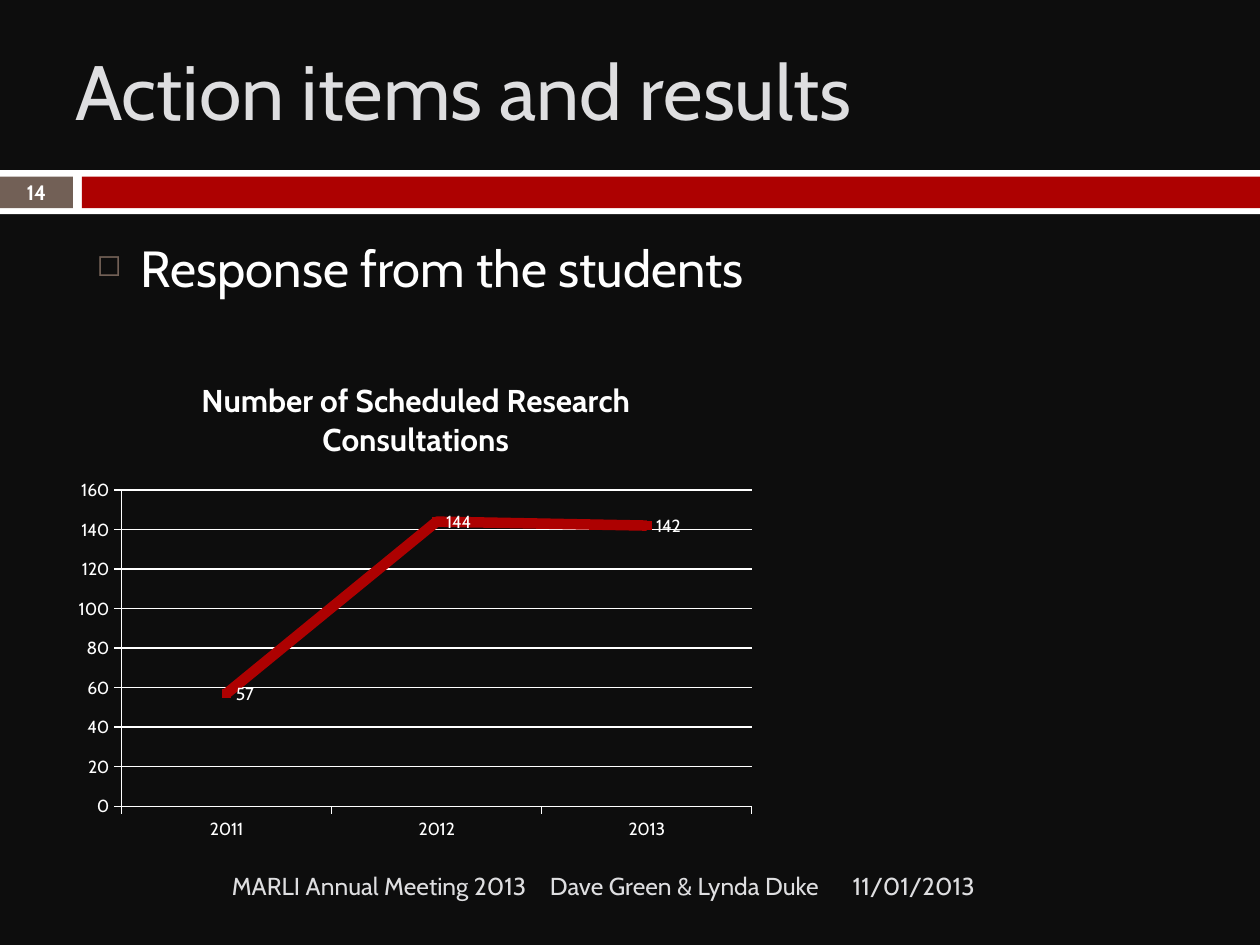
from lxml import etree
from pptx import Presentation
from pptx.chart.data import CategoryChartData
from pptx.dml.color import RGBColor
from pptx.enum import chart as charts, shapes, text
from pptx.oxml import parse_xml
from pptx.oxml.ns import nsdecls, qn
from pptx.util import Cm, Pt

FONT = "Cabin"
BLACK = RGBColor(0x0D, 0x0D, 0x0D)
WHITE = RGBColor(0xFF, 0xFF, 0xFF)
RED = RGBColor(0xAD, 0x01, 0x01)
BROWN = RGBColor(0x72, 0x60, 0x56)
SILVER = RGBColor(0xDE, 0xDE, 0xE0)

CHART_TITLE = "Number of Scheduled Research Consultations"
CONSULTATIONS = {"2011": 57, "2012": 144, "2013": 142}
PLOT_AREA = {"x": 0.08, "y": 0.27, "w": 0.9, "h": 0.64}  # shares of the chart


def style_font(font, size, color, bold=False):
    font.name = FONT
    font.size = Pt(size)
    font.color.rgb = color
    font.bold = bold


def add_band(page, left, top, width, height, color):
    band = page.shapes.add_shape(shapes.MSO_SHAPE.RECTANGLE,
                                 Cm(left), Cm(top), Cm(width), Cm(height))
    band.shadow.inherit = False
    band.fill.solid()
    band.fill.fore_color.rgb = color
    band.line.fill.background()


def add_text(page, words, area, size, color, align=text.PP_ALIGN.LEFT,
             anchor=text.MSO_ANCHOR.MIDDLE, bold=False):
    """Add a one-paragraph text box and return the paragraph."""
    box = page.shapes.add_textbox(*map(Cm, area))
    frame = box.text_frame
    frame.word_wrap = True
    frame.vertical_anchor = anchor
    frame.text = words
    para = frame.paragraphs[0]
    para.alignment = align
    style_font(para.runs[0].font, size, color, bold)
    return para


def add_bullet(para, symbol, color, percent, indent):
    props = para._p.get_or_add_pPr()
    props.set("marL", str(Cm(indent)))
    props.set("indent", str(-Cm(indent)))
    bullet_color = etree.SubElement(props, qn("a:buClr"))
    etree.SubElement(bullet_color, qn("a:srgbClr"), val=str(color))
    etree.SubElement(props, qn("a:buSzPct"), val=str(percent * 1000))
    etree.SubElement(props, qn("a:buChar"), char=symbol)


def place_plot_area(chart):
    plot_area = chart._chartSpace.chart.plotArea
    old = plot_area.find(qn("c:layout"))
    if old is not None:
        plot_area.remove(old)
    sizes = "".join(f'<c:{side} val="{share}"/>' for side, share in PLOT_AREA.items())
    plot_area.insert(0, parse_xml(
        f'<c:layout {nsdecls("c")}><c:manualLayout><c:layoutTarget val="inner"/>'
        f'<c:xMode val="edge"/><c:yMode val="edge"/>{sizes}'
        f'</c:manualLayout></c:layout>'))


def style_axis(axis):
    axis.major_tick_mark = charts.XL_TICK_MARK.OUTSIDE
    axis.minor_tick_mark = charts.XL_TICK_MARK.NONE
    style_line(axis.format.line, WHITE, 0.75)
    style_font(axis.tick_labels.font, 10, WHITE)


def style_line(line, color, width):
    line.color.rgb = color
    line.width = Pt(width)


def style_series(series):
    series.smooth = False
    style_line(series.format.line, RED, 6)
    marker = series.marker
    marker.style = charts.XL_MARKER_STYLE.SQUARE
    marker.size = 5
    marker.format.fill.solid()
    marker.format.fill.fore_color.rgb = RED
    style_line(marker.format.line, RED, 0.75)
    labels = series.data_labels
    labels.show_value = True
    labels.position = charts.XL_LABEL_POSITION.RIGHT
    style_font(labels.font, 10, WHITE)


def add_consultations_chart(page):
    data = CategoryChartData()
    data.categories = list(CONSULTATIONS)
    data.add_series(CHART_TITLE, list(CONSULTATIONS.values()))
    chart = page.shapes.add_chart(charts.XL_CHART_TYPE.LINE_MARKERS, Cm(1.32), Cm(7.19),
                                  Cm(14.12), Cm(9.96), data).chart
    style_font(chart.font, 10, WHITE)
    chart.has_legend = False
    chart.has_title = True
    title = chart.chart_title.text_frame
    title.text = CHART_TITLE
    style_font(title.paragraphs[0].runs[0].font, 18, WHITE, bold=True)
    chart.chart_title.include_in_layout = False

    style_axis(chart.category_axis)
    values = chart.value_axis
    style_axis(values)
    values.minimum_scale, values.maximum_scale, values.major_unit = 0, 160, 20
    values.has_major_gridlines = True
    style_line(values.major_gridlines.format.line, WHITE, 0.75)

    chart.plots[0].vary_by_categories = False
    style_series(chart.plots[0].series[0])
    place_plot_area(chart)


def main():
    deck = Presentation()
    deck.slide_width, deck.slide_height = Cm(25.4), Cm(19.05)
    page = deck.slides.add_slide(deck.slide_layouts[6])
    page.background.fill.solid()
    page.background.fill.fore_color.rgb = BLACK

    add_band(page, 0, 3.43, 25.4, 0.89, WHITE)
    add_band(page, 0, 3.56, 1.47, 0.64, BROWN)
    add_band(page, 1.65, 3.56, 23.75, 0.64, RED)

    add_text(page, "Action items and results", (1.27, 0.43, 22.66, 2.74), 44, SILVER)
    add_text(page, "14", (0, 3.53, 1.47, 0.69), 11.9, WHITE,
             text.PP_ALIGN.CENTER, bold=True)

    response = add_text(page, "Response from the students", (1.7, 4.65, 22.66, 2.4),
                        29, WHITE, anchor=text.MSO_ANCHOR.TOP)
    response.space_before = Pt(7)
    add_bullet(response, "◻", BROWN, 60, 0.89)

    add_consultations_chart(page)

    right = text.PP_ALIGN.RIGHT
    for words, left, width, align in (
            ("MARLI Annual Meeting 2013", 1.7, 9.17, right),
            ("Dave Green & Lynda Duke", 10.2, 6.56, right),
            ("11/01/2013", 16.94, 7.42, text.PP_ALIGN.LEFT)):
        add_text(page, words, (left, 17.35, width, 1.02), 14, SILVER, align)

    deck.save("out.pptx")


if __name__ == "__main__":
    main()
